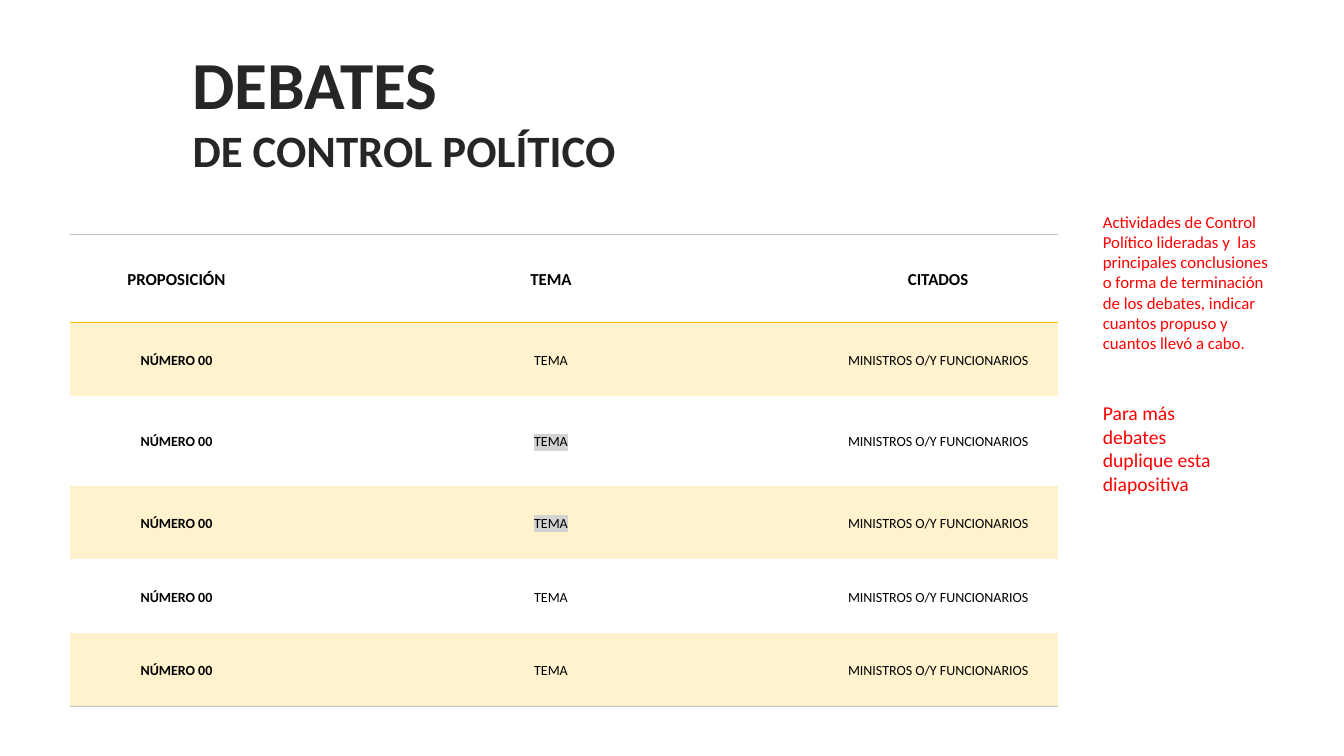
from lxml import etree
from pptx import Presentation
from pptx.dml.color import RGBColor
from pptx.enum import text
from pptx.oxml import ns
from pptx.util import Inches, Pt

TITLE = [("DEBATES", 48), ("DE CONTROL POLÍTICO", 32)]
HEADER = ["PROPOSICIÓN", "TEMA", "CITADOS"]
DEBATE = ["NÚMERO 00", "TEMA", "MINISTROS O/Y FUNCIONARIOS"]
ROWS = [HEADER] + [DEBATE] * 5
HIGHLIGHTED = [(2, 1), (3, 1)]
COLUMN_WIDTHS = [2.12, 5.31, 2.37]
ROW_HEIGHTS = [0.87, 0.73, 0.89, 0.73, 0.73, 0.73]
NOTES = [
    ("Actividades de Control Político lideradas y  las principales conclusiones "
     "o forma de terminación de los debates, indicar cuantos propuso y cuantos "
     "llevó a cabo.", 12, (10.84, 2.05, 1.94, 1.51)),
    ("Para más debates duplique esta diapositiva", 14, (10.84, 3.93, 1.51, 1.04)),
]
FONT = "Calibri"
PLAIN_STYLE = "{2D5ABB26-0587-4C30-8999-92F81FD0307C}"
BLACK = RGBColor(0, 0, 0)
CHARCOAL = RGBColor(0x26, 0x26, 0x26)
RED = RGBColor(0xFF, 0, 0)
GOLD = RGBColor(0xFF, 0xC0, 0)
CREAM = RGBColor(0xFF, 0xF2, 0xCC)
GREY = RGBColor(0xBF, 0xBF, 0xBF)
LIGHT_GREY = RGBColor(0xD3, 0xD3, 0xD3)


def set_font(paragraph, size, color, bold=False):
    """Give a paragraph its typeface, size, colour and weight."""
    font = paragraph.font
    font.name, font.size, font.bold = FONT, Pt(size), bold
    font.color.rgb = color


def add_color(parent, tag, color):
    """Append an element of the given tag holding an RGB colour."""
    element = etree.SubElement(parent, ns.qn(tag))
    etree.SubElement(element, ns.qn("a:srgbClr"), val=str(color))


def add_border(cell, side, color, points):
    """Draw a cell border; call it before the cell is filled."""
    properties = cell._tc.get_or_add_tcPr()
    line = etree.SubElement(properties, ns.qn(side), w=str(Pt(points)))
    add_color(line, "a:solidFill", color)


def add_title(slide):
    """Place the two-line title in its placeholder."""
    title = slide.shapes.title
    title.left, title.top = Inches(1.81), Inches(0.37)
    title.width, title.height = Inches(6), Inches(1.45)
    frame = title.text_frame
    frame.text = "\n".join(line for line, size in TITLE)
    frame.vertical_anchor = text.MSO_ANCHOR.TOP
    frame.auto_size = text.MSO_AUTO_SIZE.NONE
    for paragraph, (line, size) in zip(frame.paragraphs, TITLE):
        paragraph.alignment = text.PP_ALIGN.LEFT
        set_font(paragraph, size, CHARCOAL, True)


def add_note(slide, words, size, box):
    """Add one red note beside the table."""
    frame = slide.shapes.add_textbox(*map(Inches, box)).text_frame
    frame.word_wrap = True
    frame.text = words
    set_font(frame.paragraphs[0], size, RED)


def fill_cell(cell, row, column):
    """Write and format one table cell."""
    cell.text = ROWS[row][column]
    cell.vertical_anchor = text.MSO_ANCHOR.MIDDLE
    cell.margin_left = cell.margin_right = Inches(0.07)
    cell.margin_top = cell.margin_bottom = 0
    paragraph = cell.text_frame.paragraphs[0]
    paragraph.alignment = text.PP_ALIGN.CENTER
    paragraph.line_spacing = 1.15
    paragraph.space_after = Pt(10)
    set_font(paragraph, 10 if row else 12, BLACK, row == 0 or column == 0)
    if (row, column) in HIGHLIGHTED:
        add_color(paragraph.runs[0]._r.get_or_add_rPr(), "a:highlight", LIGHT_GREY)
    if row == 0:
        add_border(cell, "a:lnT", GREY, 0.75)
        add_border(cell, "a:lnB", GOLD, 1)
    elif row == len(ROWS) - 1:
        add_border(cell, "a:lnB", GREY, 0.75)
    if row % 2:
        cell.fill.solid()
        cell.fill.fore_color.rgb = CREAM
    else:
        cell.fill.background()


def add_debates(slide):
    """Build the table of debates."""
    frame = slide.shapes.add_table(
        len(ROWS), len(HEADER), Inches(0.69), Inches(2.33),
        Inches(sum(COLUMN_WIDTHS)), Inches(sum(ROW_HEIGHTS)))
    table = frame.table
    table._tbl.tblPr.find(ns.qn("a:tableStyleId")).text = PLAIN_STYLE
    table.horz_banding = False
    for column, width in zip(table.columns, COLUMN_WIDTHS):
        column.width = Inches(width)
    for index, height in enumerate(ROW_HEIGHTS):
        table.rows[index].height = Inches(height)
        for column in range(len(HEADER)):
            fill_cell(table.cell(index, column), index, column)


def main():
    """Build and save the slide."""
    presentation = Presentation()
    presentation.slide_width, presentation.slide_height = Inches(13.33), Inches(7.5)
    slide = presentation.slides.add_slide(presentation.slide_layouts[5])
    add_title(slide)
    add_debates(slide)
    for note in NOTES:
        add_note(slide, *note)
    presentation.save("out.pptx")


if __name__ == "__main__":
    main()
